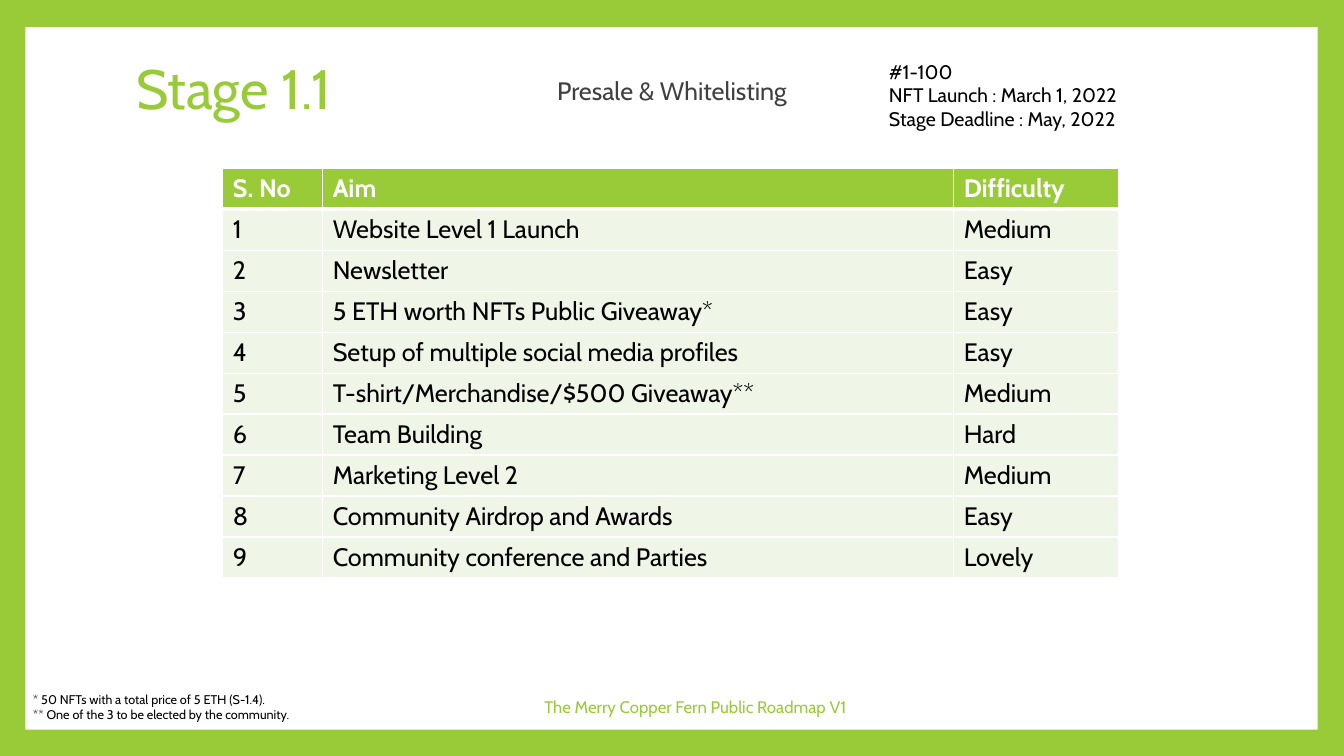
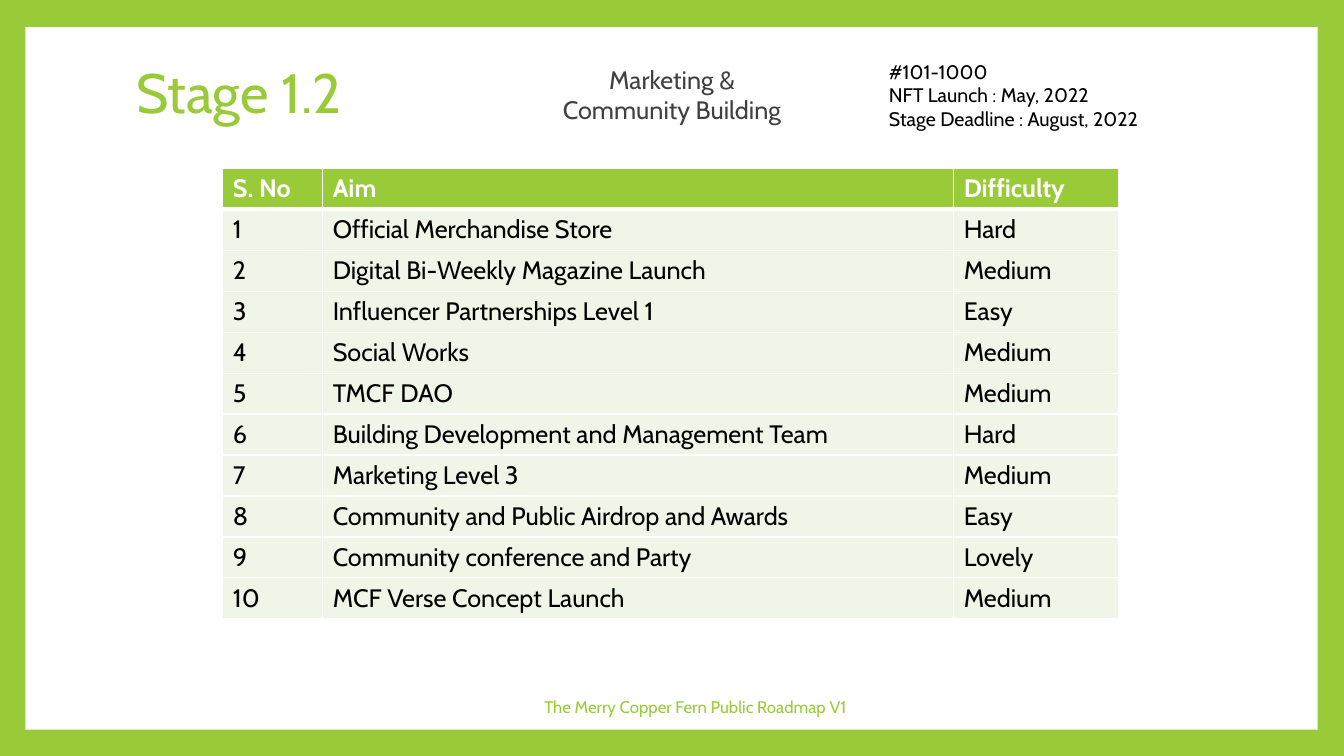
"""Build two roadmap stage slides."""
import lxml.etree
import pptx
import pptx.dml.color
import pptx.enum.shapes
import pptx.enum.text
import pptx.oxml.ns
import pptx.util

RGBColor = pptx.dml.color.RGBColor
ALIGN = pptx.enum.text.PP_ALIGN
ANCHOR = pptx.enum.text.MSO_ANCHOR
GREEN = RGBColor(0x99, 0xCB, 0x38)
PALE_GREEN = RGBColor(0xEF, 0xF6, 0xE8)
WHITE = RGBColor(0xFF, 0xFF, 0xFF)
BLACK = RGBColor(0x00, 0x00, 0x00)
GRAY = RGBColor(0x40, 0x40, 0x40)
FONT = "Cabin"
WIDTH = pptx.util.Inches(13.33)
HEIGHT = pptx.util.Inches(7.5)

PANEL_BOX = (1.88, 3.6, 96.15, 92.93)
FACTS_BOX = (65.4, 7.2, 24.98, 10.8)
FOOTER_BOX = (32.4, 90.8, 38.7, 5.33)
NOTES_BOX = (1.72, 90.8, 40.8, 5.33)
TABLE_CORNER = (16.58, 22.27)
COLUMN_SHARES = (7.43, 46.95, 12.3)
ROW_SHARE = 5.42
HEADER = ("S. No", "Aim", "Difficulty")
FOOTER = "The Merry Copper Fern Public Roadmap V1"

STAGES = [
    {
        "title": "Stage 1.1",
        "title_box": (9.38, 8.93, 26.1, 6.27),
        "theme": "Presale & Whitelisting",
        "theme_box": (40.25, 9.33, 19.5, 5.33),
        "facts": ["#1-100", "NFT Launch : March 1, 2022", "Stage Deadline : May, 2022"],
        "notes": ["* 50 NFTs with a total price of 5 ETH (S-1.4).",
                  "** One of the 3 to be elected by the community."],
        "aims": [
            ("Website Level 1 Launch", "Medium"),
            ("Newsletter", "Easy"),
            ("5 ETH worth NFTs Public Giveaway*", "Easy"),
            ("Setup of multiple social media profiles", "Easy"),
            ("T-shirt/Merchandise/$500 Giveaway**", "Medium"),
            ("Team Building", "Hard"),
            ("Marketing Level 2", "Medium"),
            ("Community Airdrop and Awards", "Easy"),
            ("Community conference and Parties", "Lovely"),
        ],
    },
    {
        "title": "Stage 1.2",
        "title_box": (9.38, 8.93, 26.1, 7.33),
        "theme": "Marketing & Community Building",
        "theme_box": (40.25, 7.87, 19.5, 9.47),
        "facts": ["#101-1000", "NFT Launch : May, 2022", "Stage Deadline : August, 2022"],
        "notes": [],
        "aims": [
            ("Official Merchandise Store", "Hard"),
            ("Digital Bi-Weekly Magazine Launch", "Medium"),
            ("Influencer Partnerships Level 1", "Easy"),
            ("Social Works", "Medium"),
            ("TMCF DAO", "Medium"),
            ("Building Development and Management Team", "Hard"),
            ("Marketing Level 3", "Medium"),
            ("Community and Public Airdrop and Awards", "Easy"),
            ("Community conference and Party", "Lovely"),
            ("MCF Verse Concept Launch", "Medium"),
        ],
    },
]


def across(share):
    """Turn a percentage of the slide width into a length."""
    return round(WIDTH * share / 100)


def down(share):
    """Turn a percentage of the slide height into a length."""
    return round(HEIGHT * share / 100)


def place(box):
    """Turn a box of percentages into left, top, width and height."""
    left, top, width, height = box
    return across(left), down(top), across(width), down(height)


def set_values(target, values):
    """Set each attribute named in a dict of format values."""
    for name, value in values.items():
        setattr(target, name, value)


def write_text(text_frame, lines, size, color, bold=False, **paragraph_format):
    """Write one formatted paragraph for each line."""
    for index, line in enumerate(lines):
        paragraph = text_frame.paragraphs[0] if index == 0 else text_frame.add_paragraph()
        set_values(paragraph, paragraph_format)
        run = paragraph.add_run()
        run.text = line
        set_values(run.font, {"name": FONT, "size": pptx.util.Pt(size), "bold": bold})
        run.font.color.rgb = color


def fit_frame(text_frame, anchor):
    """Make a frame wrap its text at a fixed size."""
    set_values(text_frame, {"word_wrap": True, "vertical_anchor": anchor,
                            "auto_size": pptx.enum.text.MSO_AUTO_SIZE.NONE})


def add_text(slide, box, lines, size, color, anchor=ANCHOR.TOP, alignment=ALIGN.LEFT):
    """Add a text box."""
    text_frame = slide.shapes.add_textbox(*place(box)).text_frame
    fit_frame(text_frame, anchor)
    write_text(text_frame, lines, size, color, alignment=alignment)


def add_title(slide, box, title):
    """Move and format the title placeholder."""
    shape = slide.shapes.title
    set_values(shape, dict(zip(("left", "top", "width", "height"), place(box))))
    fit_frame(shape.text_frame, ANCHOR.MIDDLE)
    write_text(shape.text_frame, [title], 39.6, GREEN,
               alignment=ALIGN.LEFT, line_spacing=0.9)


def add_panel(slide):
    """Lay the white panel behind the title."""
    panel = slide.shapes.add_shape(
        pptx.enum.shapes.MSO_SHAPE.RECTANGLE, *place(PANEL_BOX))
    panel.shadow.inherit = False
    panel.fill.solid()
    panel.fill.fore_color.rgb = WHITE
    panel.line.fill.background()
    slide.shapes.title.element.addprevious(panel.element)


def set_borders(cell, top, bottom):
    """Draw white borders around a cell."""
    properties = cell._tc.get_or_add_tcPr()
    qualify = pptx.oxml.ns.qn
    for side, points in (("L", 1), ("R", 1), ("T", top), ("B", bottom)):
        line = lxml.etree.SubElement(
            properties, qualify(f"a:ln{side}"), w=str(pptx.util.Pt(points)))
        fill = lxml.etree.SubElement(line, qualify("a:solidFill"))
        lxml.etree.SubElement(fill, qualify("a:srgbClr"), val=str(WHITE))


def add_aims(slide, aims):
    """Add the table of numbered aims."""
    rows = [HEADER] + [(str(number), *aim) for number, aim in enumerate(aims, 1)]
    box = (*TABLE_CORNER, sum(COLUMN_SHARES), ROW_SHARE * len(rows))
    table = slide.shapes.add_table(len(rows), len(HEADER), *place(box)).table
    for column, share in zip(table.columns, COLUMN_SHARES):
        column.width = across(share)
    for row_index, row in enumerate(rows):
        is_header = row_index == 0
        table.rows[row_index].height = down(ROW_SHARE)
        for column_index, text in enumerate(row):
            cell = table.cell(row_index, column_index)
            set_borders(cell, 3 if row_index == 1 else 1, 3 if is_header else 1)
            cell.fill.solid()
            cell.fill.fore_color.rgb = GREEN if is_header else PALE_GREEN
            write_text(cell.text_frame, [text], 18, WHITE if is_header else BLACK, is_header)


def add_stage(presentation, stage):
    """Add the slide of one stage."""
    slide = presentation.slides.add_slide(
        presentation.slide_layouts.get_by_name("Title Only"))
    add_panel(slide)
    add_title(slide, stage["title_box"], stage["title"])
    add_aims(slide, stage["aims"])
    add_text(slide, FACTS_BOX, stage["facts"], 14, BLACK)
    add_text(slide, FOOTER_BOX, [FOOTER], 12, GREEN, ANCHOR.MIDDLE, ALIGN.CENTER)
    if stage["notes"]:
        add_text(slide, NOTES_BOX, stage["notes"], 9, BLACK)
    add_text(slide, stage["theme_box"], [stage["theme"]], 18, GRAY, alignment=ALIGN.CENTER)


def main():
    """Build and save the presentation."""
    presentation = pptx.Presentation()
    set_values(presentation, {"slide_width": WIDTH, "slide_height": HEIGHT})
    background = presentation.slide_master.background.fill
    background.solid()
    background.fore_color.rgb = GREEN
    for stage in STAGES:
        add_stage(presentation, stage)
    presentation.save("out.pptx")


if __name__ == "__main__":
    main()
